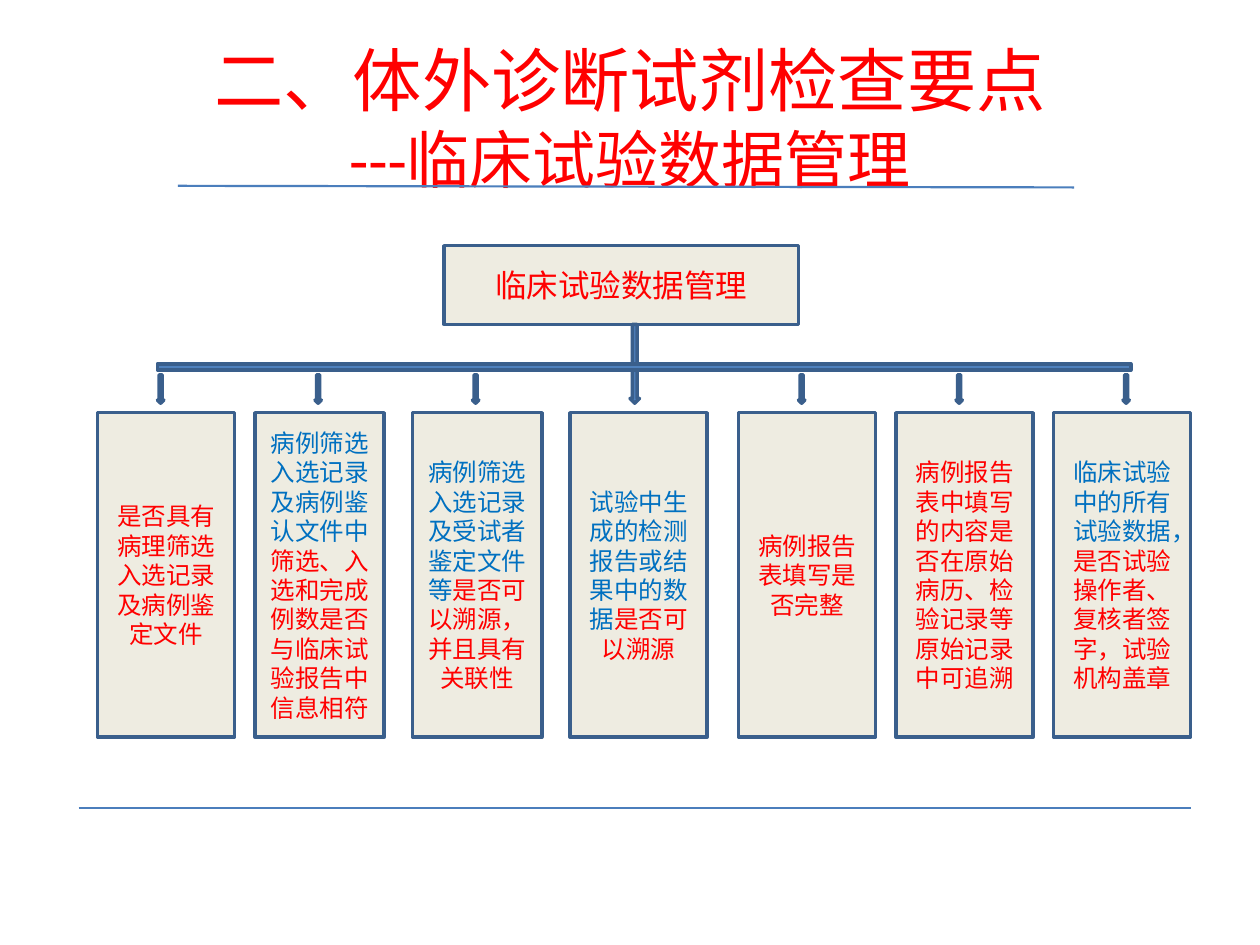
from dataclasses import dataclass

from lxml.etree import SubElement
from pptx import Presentation
from pptx.dml.color import RGBColor as Color
from pptx.enum.shapes import MSO_CONNECTOR as Connector, MSO_SHAPE as Shape
from pptx.enum.text import MSO_ANCHOR as Anchor, PP_ALIGN as Align
from pptx.oxml.ns import qn
from pptx.util import Inches, Pt


@dataclass(frozen=True)
class Theme:
    font: str = "Calibri"
    red: str = "FF0000"
    blue: str = "0070C0"
    panel: str = "EEECE1"
    accent: str = "4F81BD"
    border: str = "3A5F8C"
    rule: str = "4B7EBC"
    title_size: float = 39.6
    subtitle_size: float = 36
    root_size: float = 18
    box_size: float = 14
    border_width: float = 2
    rule_width: float = 1.25


THEME = Theme()
COLUMNS, ROWS = 8, 6
WIDTH, HEIGHT = Inches(10), Inches(7.5)


class SlideBuilder:
    """Draws on one slide; places are in grid columns and rows."""

    def __init__(self, slide, theme):
        self.shapes = slide.shapes
        self.theme = theme

    def place(self, *lengths):
        units = (WIDTH / COLUMNS, HEIGHT / ROWS)
        return [round(length * units[i % 2]) for i, length in enumerate(lengths)]

    def set_text(self, shape, spans):
        """Fill a shape with (text, size, colour) spans; "\\n" breaks the line."""
        frame = shape.text_frame
        for name, value in {"word_wrap": True, "vertical_anchor": Anchor.MIDDLE}.items():
            setattr(frame, name, value)
        para = frame.paragraphs[0]
        para.alignment = Align.CENTER
        for text, size, color in spans:
            if text == "\n":
                para.add_line_break()
                continue
            span = para.add_run()
            span.text = text
            for name, value in {"size": Pt(size), "name": self.theme.font}.items():
                setattr(span.font, name, value)
            span.font.color.rgb = Color.from_string(color)

    def stroke(self, line, color, width):
        line.color.rgb = Color.from_string(color)
        line.width = Pt(width)

    def title(self, at, spans):
        self.set_text(self.shapes.add_textbox(*self.place(*at)), spans)

    def block(self, at, fill, kind=Shape.RECTANGLE, spans=()):
        shape = self.shapes.add_shape(kind, *self.place(*at))
        shape.shadow.inherit = False
        shape.fill.solid()
        shape.fill.fore_color.rgb = Color.from_string(fill)
        self.stroke(shape.line, self.theme.border, self.theme.border_width)
        if spans:
            self.set_text(shape, spans)

    def panel(self, at, spans):
        self.block(at, self.theme.panel, spans=spans)

    def arrow(self, at):
        self.block(at, self.theme.accent, Shape.DOWN_ARROW)

    def rule(self, *ends):
        line = self.shapes.add_connector(Connector.STRAIGHT, *self.place(*ends))
        self.stroke(line.line, self.theme.rule, self.theme.rule_width)
        SubElement(line.element.spPr, qn("a:effectLst"))


WIDE, NARROW = 0.87, 0.82
# Each check: box width, blue lead-in, red question
CHECKS = [
    (WIDE, "", "是否具有病理筛选入选记录及病例鉴定文件"),
    (NARROW, "病例筛选入选记录及病例鉴认文件中",
     "筛选、入选和完成例数是否与临床试验报告中信息相符"),
    (NARROW, "病例筛选入选记录及受试者鉴定文件等", "是否可以溯源，并且具有关联性"),
    (WIDE, "试验中生成的检测报告或结果中的数据", "是否可以溯源"),
    (WIDE, "", "病例报告表填写是否完整"),
    (WIDE, "", "病例报告表中填写的内容是否在原始病历、检验记录等原始记录中可追溯"),
    (WIDE, "临床试验中的所有试验数据，", "是否试验操作者、复核者签字，试验机构盖章"),
]
MIDDLE = len(CHECKS) // 2
RIGHT_SHIFT = 0.07  # boxes right of the middle one sit a little further out


def main():
    deck = Presentation()
    deck.slide_width, deck.slide_height = WIDTH, HEIGHT
    page = SlideBuilder(deck.slides.add_slide(deck.slide_layouts[6]), THEME)

    page.title((0.4, 0.24, 7.2, 1), [
        ("二、体外诊断试剂检查要点", THEME.title_size, THEME.red),
        ("\n", None, None),
        ("---临床试验数据管理", THEME.subtitle_size, THEME.red),
    ])
    page.rule(1.13, 1.18, 6.82, 1.19)

    page.panel((2.82, 1.56, 2.25, 0.5),
               [("临床试验数据管理", THEME.root_size, THEME.red)])
    page.arrow((4, 2.06, 0.06, 0.5))
    page.block((1, 2.31, 6.18, 0.04), THEME.accent)

    for i, (width, lead, question) in enumerate(CHECKS):
        column = i + (RIGHT_SHIFT if i > MIDDLE else 0)
        spans = [(text, THEME.box_size, color)
                 for text, color in ((lead, THEME.blue), (question, THEME.red)) if text]
        page.panel((column + 0.62, 2.62, width, 2.06), spans)
        if i != MIDDLE:
            last_shift = 0.06 if i == len(CHECKS) - 1 else 0
            page.arrow((column + 1 + last_shift, 2.38, 0.04, 0.18))

    page.rule(0.5, 5.13, 7.56, 5.13)
    deck.save("out.pptx")


if __name__ == "__main__":
    main()
